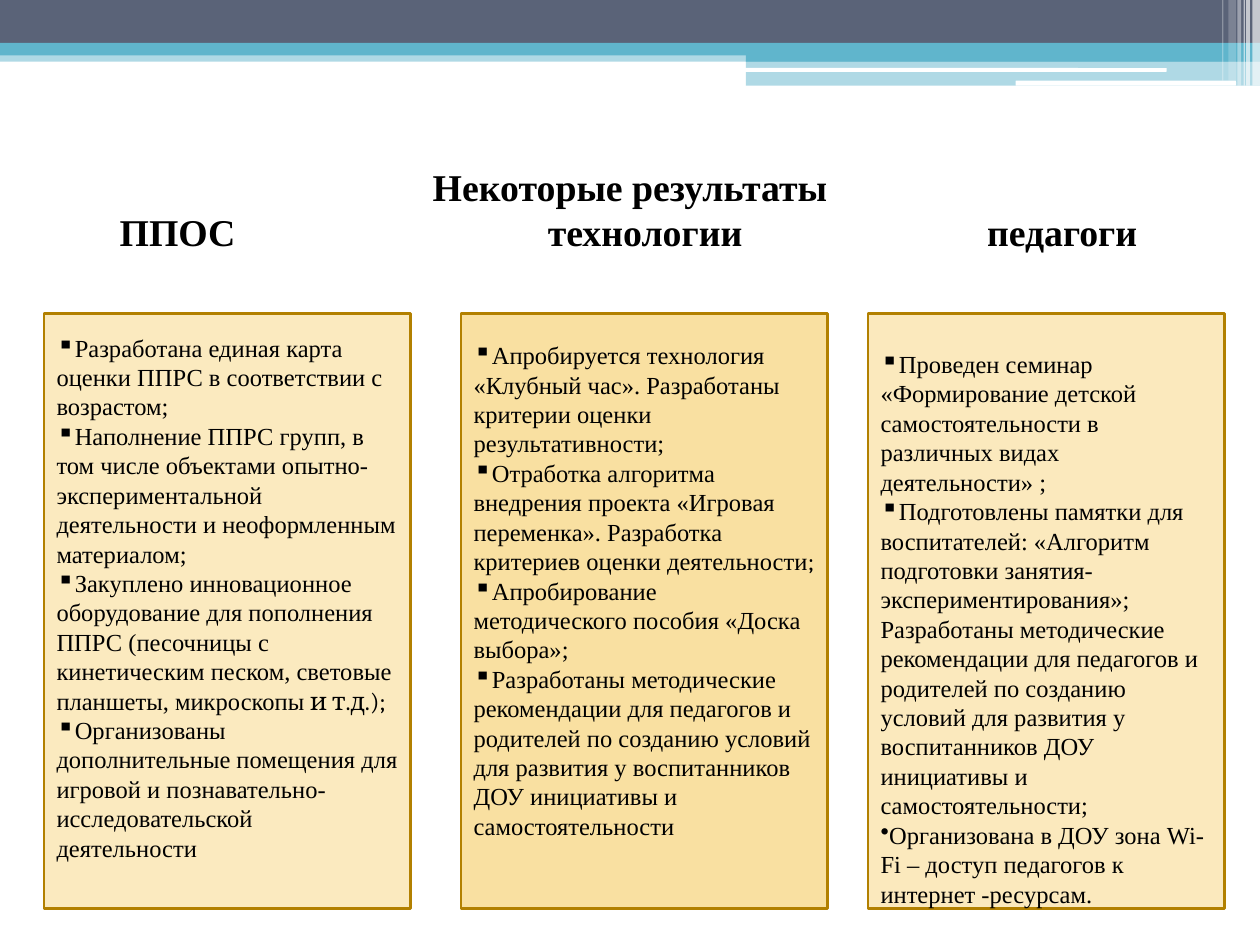
from pptx import Presentation
from pptx.dml.color import RGBColor
from pptx.enum.shapes import MSO_SHAPE as Shape
from pptx.enum.text import MSO_ANCHOR as Anchor, MSO_AUTO_SIZE as AutoSize, PP_ALIGN as Align
from pptx.oxml.ns import qn
from pptx.util import Inches, Pt
from lxml.etree import SubElement

# Content
TITLE = "Некоторые результаты"
SERIF, ACCENT_FONT = "Times New Roman", "Cambria"
SQUARE, DOT = "▪", "•"

# Each item is a bullet and its runs; a run is a text and its font
COLUMNS = [
    dict(heading="ППОС", heading_center=1.41, left=0.35, width=2.91, opacity=25, text_top=0.15, items=[
        (SQUARE, [("Разработана единая карта оценки ППРС в соответствии с возрастом;", SERIF)]),
        (SQUARE, [("Наполнение ППРС групп, в том числе объектами опытно-экспериментальной "
                   "деятельности и неоформленным материалом;", SERIF)]),
        (SQUARE, [("Закуплено инновационное оборудование для пополнения ППРС (песочницы с "
                   "кинетическим песком, световые планшеты, микроскопы", SERIF),
                  (" и т.д.);", ACCENT_FONT)]),
        (SQUARE, [("Организованы дополнительные помещения для игровой и познавательно- "
                   "исследовательской деятельности", SERIF)]),
    ]),
    dict(heading="технологии", heading_center=5.12, left=3.66, width=2.91, opacity=37, text_top=0.21, items=[
        (SQUARE, [("Апробируется технология «Клубный час». Разработаны критерии оценки "
                   "результативности;", SERIF)]),
        (SQUARE, [("Отработка алгоритма внедрения проекта «Игровая переменка». Разработка "
                   "критериев оценки деятельности", SERIF), (";", ACCENT_FONT)]),
        (SQUARE, [("Апробирование методического пособия «Доска выбора»;", SERIF)]),
        (SQUARE, [("Разработаны методические рекомендации для педагогов и родителей по созданию "
                   "условий для развития у воспитанников ДОУ инициативы и самостоятельности", SERIF)]),
    ]),
    dict(heading="педагоги", heading_center=8.43, left=6.89, width=2.83, opacity=26, text_top=0.28, items=[
        (SQUARE, [("Проведен семинар «Формирование детской самостоятельности в различных видах "
                   "деятельности» ;", SERIF)]),
        (SQUARE, [("Подготовлены памятки для воспитателей: «Алгоритм подготовки "
                   "занятия-экспериментирования»;\vРазработаны методические рекомендации для "
                   "педагогов и родителей по созданию условий для развития у воспитанников ДОУ "
                   "инициативы и самостоятельности;", SERIF)]),
        (DOT, [("Организована в ДОУ зона Wi-Fi – доступ педагогов к интернет -ресурсам.", SERIF)]),
    ]),
]
COLUMN_TOP, COLUMN_HEIGHT = 2.49, 4.72

# Header decoration: left, top, width, height, colour, opacity in percent
NAVY, TEAL, WHITE, BLACK = "5A6378", "60B5CC", "FFFFFF", "000000"
GOLD, DARK_GOLD = "F0AD00", "B28000"
BANDS = [
    (0, 0.4, 10, 0.09, TEAL, 50),
    (0, 0, 10, 0.34, NAVY, 100),
    (0, 0.34, 10, 0.1, TEAL, 100),
    (5.92, 0.39, 4.08, 0.1, TEAL, 100),
    (5.92, 0.48, 4.08, 0.2, TEAL, 50),
]
SLITS = [(5.91, 0.54, 3.35, 0.03, WHITE, 100), (8.06, 0.64, 1.75, 0.04, WHITE, 100)]
# Vertical stripes: left, width, height, opacity
STRIPES = [
    (9.94, 0.06, 0.68, 65), (9.89, 0.03, 0.68, 65), (9.87, 0.01, 0.68, 60),
    (9.82, 0.03, 0.68, 40), (9.75, 0.06, 0.64, 20), (9.7, 0.01, 0.64, 30),
]


def paint(target, color):
    target.solid()
    target.fore_color.rgb = RGBColor.from_string(color)


def add_block(slide, left, top, width, height, color, opacity, kind=Shape.RECTANGLE):
    block = slide.shapes.add_shape(kind, *map(Inches, (left, top, width, height)))
    block.shadow.inherit = False
    block.line.fill.background()
    paint(block.fill, color)
    if opacity < 100:
        tint = block.fill._xPr.find(f"{qn('a:solidFill')}/{qn('a:srgbClr')}")
        SubElement(tint, qn("a:alpha"), val=str(opacity * 1000))
    return block


def set_frame(frame, text_top):
    settings = dict(word_wrap=True, auto_size=AutoSize.NONE, vertical_anchor=Anchor.TOP,
                    margin_top=Inches(text_top), margin_left=Inches(0.1), margin_right=Inches(0.1))
    for name, value in settings.items():
        setattr(frame, name, value)


def add_text(paragraph, text, size, font_name=SERIF, bold=False):
    for position, line in enumerate(text.split("\v")):
        if position:
            paragraph.add_line_break()
        run = paragraph.add_run()
        run.text = line
        for name, value in dict(name=font_name, size=Pt(size), bold=bold).items():
            setattr(run.font, name, value)
        paint(run.font.fill, BLACK)


def add_title(slide):
    title = slide.shapes.title
    left = 0.5
    for name, value in dict(left=left, top=1.25, width=9, height=1.17).items():
        setattr(title, name, Inches(value))
    frame = title.text_frame
    set_frame(frame, 0.05)
    heading_line = frame.add_paragraph()
    frame.paragraphs[0].alignment = Align.CENTER
    add_text(frame.paragraphs[0], TITLE, 21.6, bold=True)

    # Headings stand on centred tab stops
    heading_line.alignment = Align.LEFT
    tabs = SubElement(heading_line._p.get_or_add_pPr(), qn("a:tabLst"))
    for column in COLUMNS:
        stop = Inches(column["heading_center"] - left - 0.1)
        SubElement(tabs, qn("a:tab"), pos=str(int(stop)), algn="ctr")
    add_text(heading_line, "".join("\t" + column["heading"] for column in COLUMNS), 21.6, bold=True)


def add_column(slide, column):
    card = add_block(slide, column["left"], COLUMN_TOP, column["width"], COLUMN_HEIGHT,
                     GOLD, column["opacity"])
    paint(card.line.fill, DARK_GOLD)
    card.line.width = Pt(1.5)
    frame = card.text_frame
    set_frame(frame, column["text_top"])
    for position, (bullet, runs) in enumerate(column["items"]):
        paragraph = frame.add_paragraph() if position else frame.paragraphs[0]
        paragraph.alignment = Align.LEFT
        SubElement(paragraph._p.get_or_add_pPr(), qn("a:buChar"), char=bullet)
        for text, font_name in runs:
            add_text(paragraph, text, 14, font_name)


def main():
    deck = Presentation()
    deck.slide_width, deck.slide_height = Inches(10), Inches(7.5)
    slide = deck.slides.add_slide(deck.slide_layouts.get_by_name("Title Only"))

    # Header
    for band in BANDS:
        add_block(slide, *band)
    for slit in SLITS:
        add_block(slide, *slit, kind=Shape.ROUNDED_RECTANGLE)
    for left, width, height, opacity in STRIPES:
        add_block(slide, left, 0, width, height, WHITE, opacity)

    # Title and result columns
    add_title(slide)
    for column in COLUMNS:
        add_column(slide, column)
    deck.save("out.pptx")


if __name__ == "__main__":
    main()
